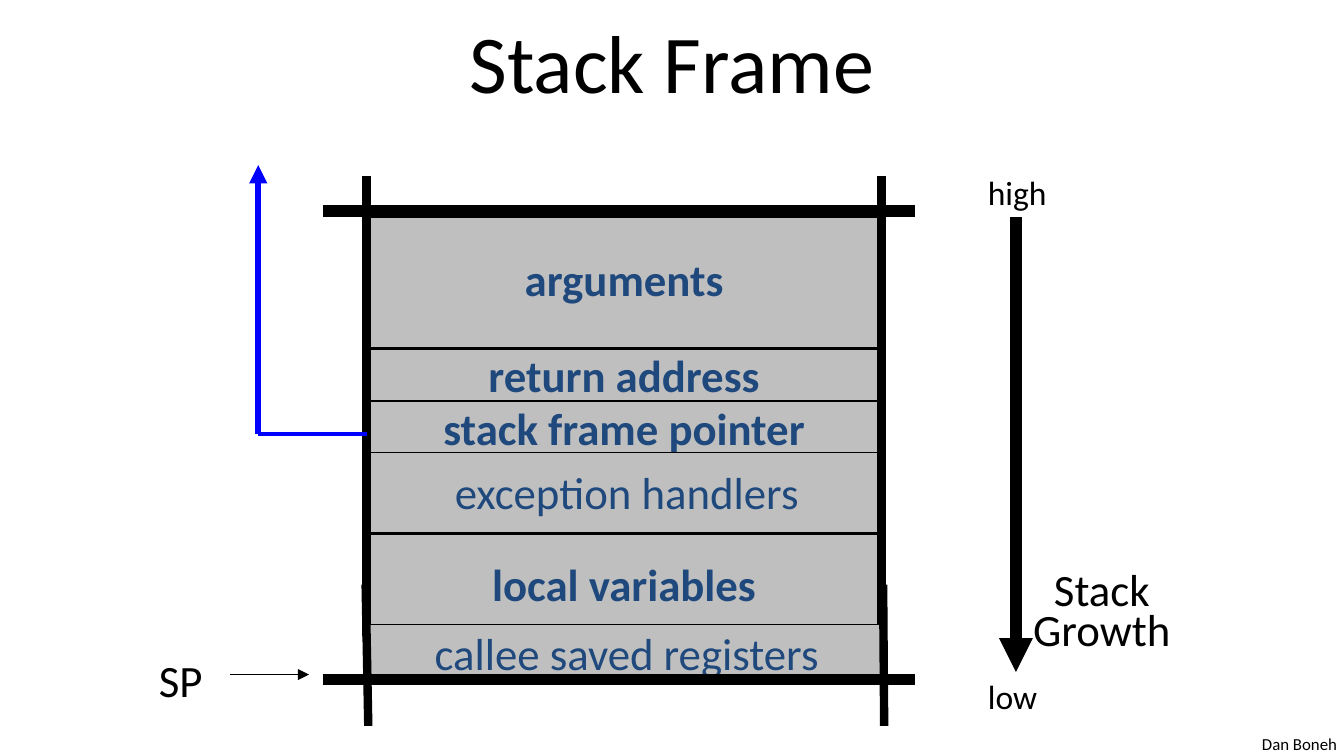
from lxml import etree
from pptx import Presentation
from pptx.dml.color import RGBColor
from pptx.enum.shapes import MSO_CONNECTOR, MSO_SHAPE
from pptx.enum.text import MSO_ANCHOR, MSO_AUTO_SIZE, PP_ALIGN
from pptx.oxml.ns import qn
from pptx.util import Cm, Pt

STRAIGHT = MSO_CONNECTOR.STRAIGHT
RECTANGLE = MSO_SHAPE.RECTANGLE
MIDDLE = MSO_ANCHOR.MIDDLE
GROW = MSO_AUTO_SIZE.SHAPE_TO_FIT_TEXT
LEFT, CENTER = PP_ALIGN.LEFT, PP_ALIGN.CENTER

FONT = "Calibri"
COLORS = {"black": "000000", "cell": "BFBFBF", "label": "1F497D", "pointer": "0000FF"}

# Stack geometry in centimetres
STACK_LEFT, STACK_WIDTH = 6.93, 9.73
STACK_RIGHT = STACK_LEFT + STACK_WIDTH
INDENT = 0.05
BAR_LEFT, BAR_RIGHT = 6.1, 17.3
TOP_BAR, BOTTOM_BAR = 3.99, 12.85

# Text, left, top, height, bold
CELLS = [
    ("exception handlers", STACK_LEFT + INDENT, 8.51, 1.57, False),
    ("arguments", STACK_LEFT, 3.94, 2.64, True),
    ("return address", STACK_LEFT, 6.6, 0.97, True),
    ("stack frame pointer", STACK_LEFT, 7.59, 0.97, True),
    ("local variables", STACK_LEFT, 10.11, 1.85, True),
]
LAST_CELL = ("callee saved registers", STACK_LEFT + INDENT, 11.81, 1.07, False)


def color(name):
    return RGBColor.from_string(COLORS[name])


def style_paragraph(para, size, color_name="black", align=LEFT, bold=False):
    para.alignment = align
    para.font.name = FONT
    para.font.size = Pt(size)
    para.font.bold = bold
    para.font.color.rgb = color(color_name)


def add_title(page, text):
    title = page.shapes.title
    title.left, title.top, title.width, title.height = Cm(1.27), Cm(-0.05), Cm(22.86), Cm(2.39)
    title.text_frame.text = text
    title.text_frame.vertical_anchor = MIDDLE
    style_paragraph(title.text_frame.paragraphs[0], 44, align=CENTER)


def add_rectangle(page, left, top, height, line_width):
    box = page.shapes.add_shape(RECTANGLE, Cm(left), Cm(top), Cm(STACK_WIDTH), Cm(height))
    box.shadow.inherit = False
    box.fill.background()
    box.line.color.rgb = color("black")
    box.line.width = Pt(line_width)
    return box


def add_cell(page, text, left, top, height, bold):
    box = add_rectangle(page, left, top, height, 0.75)
    box.fill.solid()
    box.fill.fore_color.rgb = color("cell")
    frame = box.text_frame
    frame.text = text
    frame.word_wrap = False
    frame.vertical_anchor = MIDDLE
    style_paragraph(frame.paragraphs[0], 24, "label", CENTER, bold)


def add_label(page, text, left, top, width, height, size, align=LEFT):
    box = page.shapes.add_textbox(Cm(left), Cm(top), Cm(width), Cm(height))
    frame = box.text_frame
    frame.text = text
    frame.word_wrap = False
    frame.auto_size = GROW
    for para in frame.paragraphs:
        style_paragraph(para, size, align=align)
    return box


def add_line(parent, x1, y1, x2, y2, width, color_name="black", arrow=False):
    line = parent.shapes.add_connector(STRAIGHT, Cm(x1), Cm(y1), Cm(x2), Cm(y2))
    line.line.color.rgb = color(color_name)
    line.line.width = Pt(width)
    if arrow:
        outline = line.line._get_or_add_ln()
        etree.SubElement(outline, qn("a:tailEnd"), type="triangle")
    etree.SubElement(line._element.spPr, qn("a:effectLst"))


def add_stack(page):
    for cell in CELLS:
        add_cell(page, *cell)
    # Frame and upper edges
    add_line(page, STACK_LEFT, 4.11, STACK_RIGHT, 4.11, 0.75)
    add_rectangle(page, STACK_LEFT, 4.01, 8, 4.5)
    add_line(page, BAR_LEFT, TOP_BAR, BAR_RIGHT, TOP_BAR, 6)
    for x in (STACK_LEFT, STACK_RIGHT):
        add_line(page, x, 3.33, x, 5.46, 4.5)
    # Last cell and lower edges
    add_cell(page, *LAST_CELL)
    add_line(page, BAR_LEFT, BOTTOM_BAR, BAR_RIGHT, BOTTOM_BAR, 6)
    add_line(page, 16.69, 11.05, 16.71, 13.72, 4.5)
    add_line(page, 6.91, 11.05, 6.96, 13.72, 4.5)


def add_pointers(page):
    # Stack pointer
    add_label(page, "SP", 2.74, 12.22, 1.35, 1.27, 24, CENTER)
    add_line(page, 4.34, 12.75, 5.84, 12.75, 0.75, arrow=True)
    # Frame pointer to the previous frame
    group = page.shapes.add_group_shape()
    add_line(group, STACK_LEFT, 8.2, 4.88, 8.2, 2.25, "pointer")
    add_line(group, 4.88, 8.2, 4.88, 3.12, 3.25, "pointer", arrow=True)


def add_growth(page):
    add_line(page, 19.2, 4.11, 19.2, 12.7, 6, arrow=True)
    growth = add_label(page, "Stack\nGrowth", 19.25, 10.49, 3.15, 2.13, 24, CENTER)
    growth.text_frame.paragraphs[1].line_spacing = Pt(21.5)
    add_label(page, "high", 18.42, 3.12, 1.63, 1.02, 18)
    add_label(page, "low", 18.42, 12.65, 1.45, 1.02, 18)


def main():
    deck = Presentation()
    deck.slide_width, deck.slide_height = Cm(25.4), Cm(14.29)
    page = deck.slides.add_slide(deck.slide_layouts[5])
    add_label(page, "Dan Boneh", 23.6, 13.74, 1.93, 0.64, 9)
    add_title(page, "Stack Frame")
    add_stack(page)
    add_pointers(page)
    add_growth(page)
    deck.save("out.pptx")


if __name__ == "__main__":
    main()
